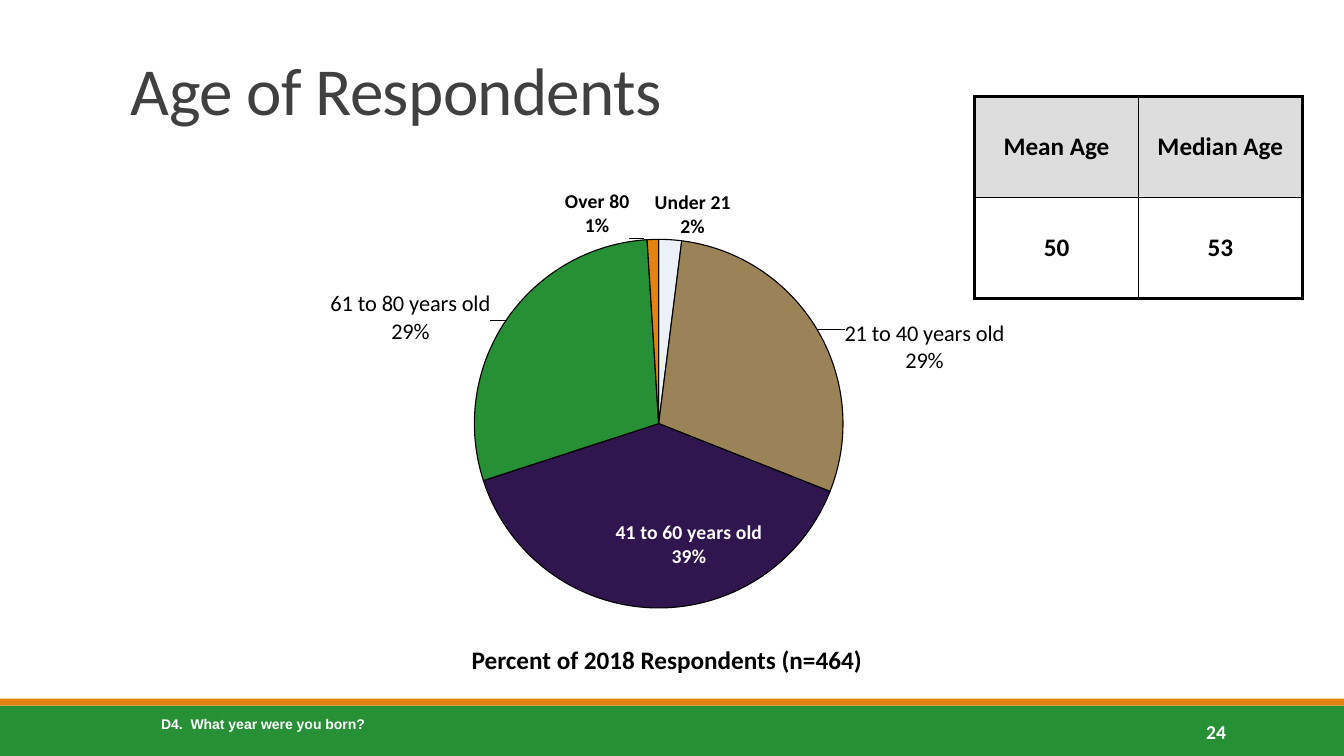
from lxml import etree
from pptx import Presentation
from pptx.chart.data import CategoryChartData
from pptx.dml.color import RGBColor
from pptx.enum.chart import XL_CHART_TYPE, XL_LABEL_POSITION
from pptx.enum.shapes import MSO_SHAPE
from pptx.enum.text import MSO_ANCHOR, PP_ALIGN
from pptx.oxml.ns import qn
from pptx.util import Pt

LEFT, RIGHT, CENTER = PP_ALIGN.LEFT, PP_ALIGN.RIGHT, PP_ALIGN.CENTER
TOP, MIDDLE, BOTTOM = MSO_ANCHOR.TOP, MSO_ANCHOR.MIDDLE, MSO_ANCHOR.BOTTOM
OUTSIDE, INSIDE = XL_LABEL_POSITION.OUTSIDE_END, XL_LABEL_POSITION.CENTER
PIE, RECTANGLE = XL_CHART_TYPE.PIE, MSO_SHAPE.RECTANGLE

BLACK = RGBColor(0x00, 0x00, 0x00)
WHITE = RGBColor(0xFF, 0xFF, 0xFF)
CHARCOAL = RGBColor(0x40, 0x40, 0x40)
GREEN = RGBColor(0x27, 0x90, 0x37)
ORANGE = RGBColor(0xE4, 0x83, 0x12)
PALE_BLUE = RGBColor(0xEB, 0xF1, 0xF7)
TAN = RGBColor(0x9B, 0x83, 0x57)
PURPLE = RGBColor(0x2F, 0x16, 0x4F)
HEADER_GREY = RGBColor(0xDD, 0xDD, 0xDD)

SLIDE_WIDTH, SLIDE_HEIGHT = 960, 540
FOOTER_BANDS = [(504, 36, GREEN), (499, 5, ORANGE)]

TEXTS = [
    ("Age of Respondents", (86.4, 22.3, 792, 73.4), "Calibri", 48, False, CHARCOAL, LEFT, BOTTOM),
    ("24", (779.8, 508.3, 103, 28.8), "Calibri", 14, True, WHITE, RIGHT, MIDDLE),
    ("Percent of 2018 Respondents (n=464)", (329.8, 456.5, 338.4, 51), "Calibri", 18, True, BLACK, LEFT, TOP),
    ("D4.  What year were you born?", (108, 507.6, 249, 19.4), "Arial", 10, True, WHITE, LEFT, TOP),
]

AGE_GROUPS = [
    ("Under 21", 0.02, PALE_BLUE, BLACK, 14, True, OUTSIDE, (0.02, 0.01)),
    ("21 to 40 years old", 0.29, TAN, BLACK, 16, False, OUTSIDE, (0.02, 0.1)),
    ("41 to 60 years old", 0.39, PURPLE, WHITE, 14, True, INSIDE, (0.03, 0.06)),
    ("61 to 80 years old", 0.29, GREEN, BLACK, 16, False, OUTSIDE, (-0.01, 0.06)),
    ("Over 80", 0.01, ORANGE, BLACK, 14, True, OUTSIDE, (-0.05, 0.01)),
]
PIE_BOX = (86.4, 123.1, 792, 342)
PIE_PLOT = (0.22, 0.14, 0.53, 0.77)

AGE_SUMMARY = [("Mean Age", "Median Age"), ("50", "53")]
SUMMARY_BOX = (696.2, 69.1, 234, 144)
OUTER_BORDER, INNER_BORDER = 2.25, 1


def in_points(box):
    return [Pt(length) for length in box]


def style_font(font, name, size, bold, color):
    font.name, font.size, font.bold = name, Pt(size), bold
    font.color.rgb = color


def add_text(slide, words, box, font_name, size, bold, color, align, anchor):
    frame = slide.shapes.add_textbox(*in_points(box)).text_frame
    frame.word_wrap = True
    frame.vertical_anchor = anchor
    paragraph = frame.paragraphs[0]
    paragraph.text = words
    paragraph.alignment = align
    style_font(paragraph.font, font_name, size, bold, color)
    return paragraph


def manual_layout(**settings):
    layout = etree.Element(qn("c:layout"))
    manual = etree.SubElement(layout, qn("c:manualLayout"))
    for tag, value in settings.items():
        etree.SubElement(manual, qn("c:" + tag)).set("val", str(value))
    return layout


def add_age_pie(slide):
    data = CategoryChartData(number_format="0%")
    data.categories = [group[0] for group in AGE_GROUPS]
    data.add_series("Series 1", [group[1] for group in AGE_GROUPS])
    chart = slide.shapes.add_chart(PIE, *in_points(PIE_BOX), data).chart
    chart.has_legend = False
    chart.has_title = False
    style_font(chart.font, "Calibri", 14, True, BLACK)

    plot = chart.plots[0]
    plot.vary_by_categories = True
    pie = plot.series[0]
    labels = pie.data_labels
    labels.show_value = labels.show_category_name = True
    labels.number_format, labels.number_format_is_linked = "0%", False
    for index, (_, _, fill, color, size, bold, position, _) in enumerate(AGE_GROUPS):
        point = pie.points[index]
        point.format.fill.solid()
        point.format.fill.fore_color.rgb = fill
        point.format.line.color.rgb = BLACK
        point.format.line.width = Pt(0.78)
        style_font(point.data_label.font, "Calibri", size, bold, color)
        point.data_label.position = position

    plot_area = next(chart.element.iter(qn("c:plotArea")))
    for label, group in zip(plot_area.iter(qn("c:dLbl")), AGE_GROUPS):
        dx, dy = group[-1]
        label.insert(1, manual_layout(x=dx, y=dy))
        label.find(qn("c:showCatName")).set("val", "1")
        label.find(qn("c:showPercent")).set("val", "0")
        etree.SubElement(label, qn("c:separator")).text = "\n"

    all_labels = next(plot_area.iter(qn("c:dLbls")))
    leader = all_labels.find(qn("c:showLeaderLines"))
    if leader is None:
        leader = etree.SubElement(all_labels, qn("c:showLeaderLines"))
    leader.set("val", "1")

    for automatic in plot_area.findall(qn("c:layout")):
        plot_area.remove(automatic)
    x, y, w, h = PIE_PLOT
    plot_area.insert(0, manual_layout(layoutTarget="inner", xMode="edge", yMode="edge", x=x, y=y, w=w, h=h))


def set_border(cell, side, width):
    properties = cell._tc.get_or_add_tcPr()
    line = etree.SubElement(properties, qn("a:" + side), w=str(int(Pt(width))))
    fill = etree.SubElement(line, qn("a:solidFill"))
    etree.SubElement(fill, qn("a:srgbClr"), val=str(BLACK))


def add_summary_table(slide):
    row_count, column_count = len(AGE_SUMMARY), len(AGE_SUMMARY[0])
    table = slide.shapes.add_table(row_count, column_count, *in_points(SUMMARY_BOX)).table
    for r, row in enumerate(AGE_SUMMARY):
        for c, words in enumerate(row):
            cell = table.cell(r, c)
            cell.vertical_anchor = MIDDLE
            paragraph = cell.text_frame.paragraphs[0]
            paragraph.text = words
            paragraph.alignment = CENTER
            style_font(paragraph.font, "Calibri", 18, True, BLACK)
            outer_sides = {"lnL": c == 0, "lnR": c == column_count - 1,
                           "lnT": r == 0, "lnB": r == row_count - 1}
            for side, is_outer in outer_sides.items():
                set_border(cell, side, OUTER_BORDER if is_outer else INNER_BORDER)
            cell.fill.solid()
            cell.fill.fore_color.rgb = HEADER_GREY if r == 0 else WHITE


def main():
    deck = Presentation()
    deck.slide_width, deck.slide_height = Pt(SLIDE_WIDTH), Pt(SLIDE_HEIGHT)
    slide = deck.slides.add_slide(deck.slide_layouts[6])

    for top, height, color in FOOTER_BANDS:
        band = slide.shapes.add_shape(RECTANGLE, *in_points((0, top, SLIDE_WIDTH, height)))
        band.shadow.inherit = False
        band.fill.solid()
        band.fill.fore_color.rgb = color
        band.line.fill.background()

    add_age_pie(slide)
    add_summary_table(slide)
    title, *_ = [add_text(slide, *text) for text in TEXTS]
    title.line_spacing = 0.85
    title.runs[0]._r.get_or_add_rPr().set("spc", "-50")
    deck.save("out.pptx")


if __name__ == "__main__":
    main()
